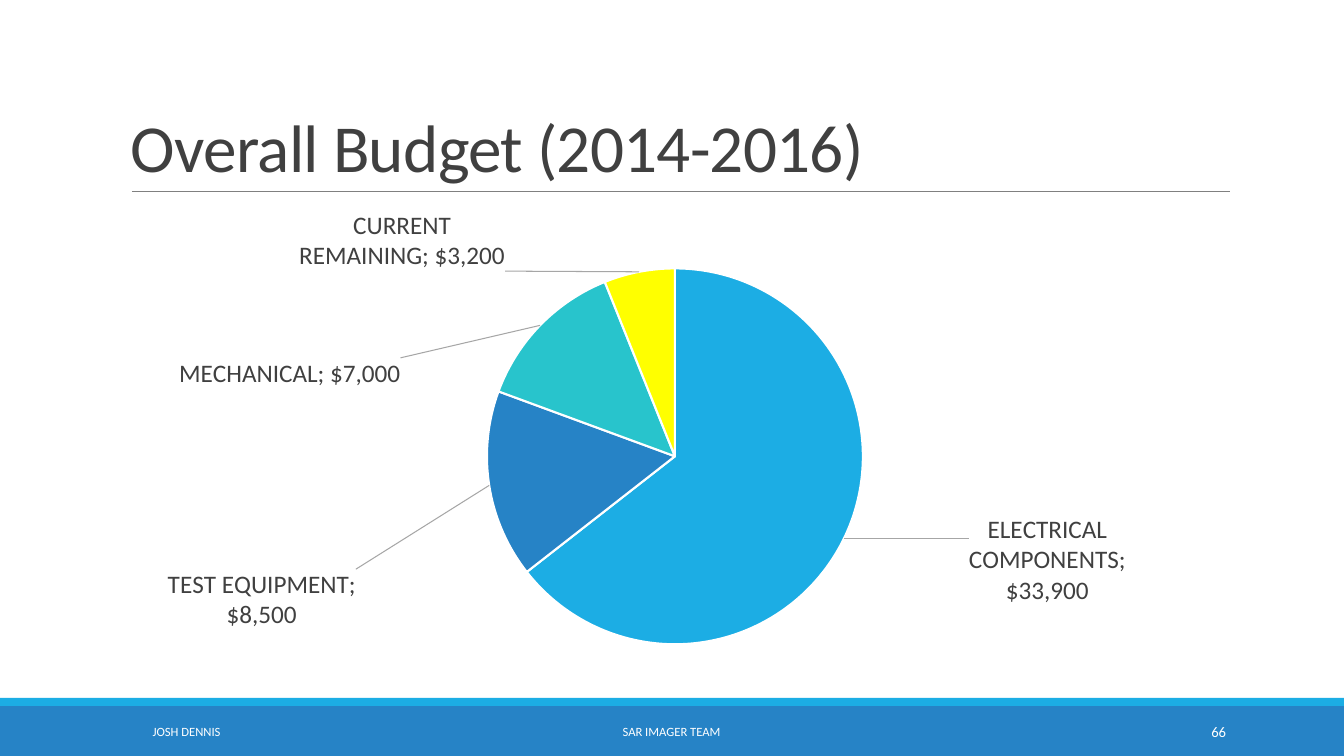
import pptx
import pptx.util
import pptx.dml.color
import pptx.chart.data
import pptx.enum.chart
import pptx.enum.shapes
import pptx.enum.text
import pptx.oxml
import pptx.oxml.ns

FONT = "Calibri"
ALIGN = pptx.enum.text.PP_ALIGN
ANCHOR = pptx.enum.text.MSO_ANCHOR
MONEY = '"$"#,##0'
DARK = "404040"

TITLE = ("Overall Budget (2014-2016)", (121, 31, 1109, 160), 48, DARK, ALIGN.LEFT, ANCHOR.BOTTOM)
FOOTERS = [
    ("SAR IMAGER TEAM", (406, 712, 531, 40), 9, "FFFFFF", ALIGN.CENTER, ANCHOR.MIDDLE),
    ("66", (1092, 712, 144, 40), 10.5, "FFFFFF", ALIGN.RIGHT, ANCHOR.MIDDLE),
    ("JOSH DENNIS", (58, 712, 257, 40), 9, "FFFFFF", ALIGN.CENTER, ANCHOR.MIDDLE),
]
BANDS = [((0, 706, 1344, 50), "2683C6"), ((0, 698, 1344, 8), "1CADE4")]
RULE = (132, 191, 1230, 191)
CHART_BOX = (121, 205, 1109, 466)
PIE_LAYOUT = {"x": 0.33, "y": 0.135, "w": 0.339, "h": 0.809}
BUDGET = [
    ("ELECTRICAL COMPONENTS", 33900, "1CADE4", (120, -27)),
    ("TEST EQUIPMENT", 8500, "2683C6", (-128, 83)),
    ("MECHANICAL", 7000, "28C4CC", (-135, 67)),
    ("CURRENT REMAINING", 3200, "FFFF00", (-133, 5)),
]


def px(length):
    return pptx.util.Emu(round(length * 914400 / 100.8))


def color(value):
    return pptx.dml.color.RGBColor.from_string(value)


def style(font, size, value):
    font.name, font.size = FONT, pptx.util.Pt(size)
    font.color.rgb = color(value)


def element(tag, **attributes):
    made = pptx.oxml.parse_xml(f"<{tag} {pptx.oxml.ns.nsdecls(tag.split(':')[0])}/>")
    for name, value in attributes.items():
        made.set(name, str(value))
    return made


def manual_layout(**parts):
    layout, manual = element("c:layout"), element("c:manualLayout")
    layout.append(manual)
    for name, value in parts.items():
        manual.append(element(f"c:{name}", val=value))
    return layout


def add_text(slide, words, box, size, value, align, anchor):
    frame = slide.shapes.add_textbox(*map(px, box)).text_frame
    frame.word_wrap = True
    frame.vertical_anchor = anchor
    paragraph = frame.paragraphs[0]
    paragraph.alignment = align
    run = paragraph.add_run()
    run.text = words
    style(run.font, size, value)
    return paragraph


def add_band(slide, box, value):
    band = slide.shapes.add_shape(pptx.enum.shapes.MSO_SHAPE.RECTANGLE, *map(px, box))
    band.shadow.inherit = False
    band.fill.solid()
    band.fill.fore_color.rgb = color(value)
    band.line.fill.background()


def add_rule(slide):
    rule = slide.shapes.add_connector(pptx.enum.shapes.MSO_CONNECTOR.STRAIGHT, *map(px, RULE))
    rule.line.color.rgb = color("808080")
    rule.line.width = pptx.util.Pt(0.5)
    rule._element.spPr.append(element("a:effectLst"))


def style_slice(point, value, shift):
    point.format.fill.solid()
    point.format.fill.fore_color.rgb = color(value)
    point.format.line.color.rgb = color("FFFFFF")
    point.format.line.width = pptx.util.Pt(1.5)
    label = point.data_label
    label.position = pptx.enum.chart.XL_LABEL_POSITION.OUTSIDE_END
    style(label.font, 18, DARK)
    node = label._dLbl
    node.find(pptx.oxml.ns.qn("c:showCatName")).set("val", "1")
    node.append(pptx.oxml.parse_xml(
        f'<c:separator {pptx.oxml.ns.nsdecls("c")}>; </c:separator>'))
    dx, dy = shift
    node.insert(1, manual_layout(x=round(dx / CHART_BOX[2], 3), y=round(dy / CHART_BOX[3], 3)))
    node.insert(2, element("c:numFmt", formatCode=MONEY, sourceLinked=0))


def add_budget_pie(slide):
    data = pptx.chart.data.CategoryChartData(number_format=MONEY)
    data.categories = [name for name, *_ in BUDGET]
    data.add_series("Series 1", [amount for _, amount, *_ in BUDGET])
    kind = pptx.enum.chart.XL_CHART_TYPE.PIE
    chart = slide.shapes.add_chart(kind, *map(px, CHART_BOX), data).chart
    chart.has_title = chart.has_legend = False
    style(chart.font, 18, "000000")
    plot = chart.plots[0]
    plot.vary_by_categories = True
    budget = plot.series[0]
    labels = budget.data_labels
    labels.show_value = labels.show_category_name = True
    labels.number_format, labels.number_format_is_linked = MONEY, False
    style(labels.font, 18, DARK)
    for index, (_, _, value, shift) in enumerate(BUDGET):
        style_slice(budget.points[index], value, shift)

    leader = pptx.oxml.parse_xml(
        f'<c:leaderLines {pptx.oxml.ns.nsdecls("c", "a")}><c:spPr><a:ln w="9525"><a:solidFill>'
        '<a:srgbClr val="A6A6A6"/></a:solidFill></a:ln></c:spPr></c:leaderLines>')
    group = labels._element
    for old in group.findall(pptx.oxml.ns.qn("c:showLeaderLines")):
        group.remove(old)
    group.append(element("c:showLeaderLines", val=1))
    group.append(leader)

    area = chart._chartSpace.chart.plotArea
    for old in area.findall(pptx.oxml.ns.qn("c:layout")):
        area.remove(old)
    area.insert(0, manual_layout(layoutTarget="inner", xMode="edge", yMode="edge", **PIE_LAYOUT))


def main():
    deck = pptx.Presentation()
    deck.slide_width, deck.slide_height = px(1344), px(756)
    slide = deck.slides.add_slide(deck.slide_layouts[6])
    for box, value in BANDS:
        add_band(slide, box, value)
    add_rule(slide)
    title = add_text(slide, *TITLE)
    title.line_spacing = 0.85
    title.runs[0].font._element.set("spc", "-50")
    add_budget_pie(slide)
    for footer in FOOTERS:
        add_text(slide, *footer)
    deck.save("out.pptx")


if __name__ == "__main__":
    main()
